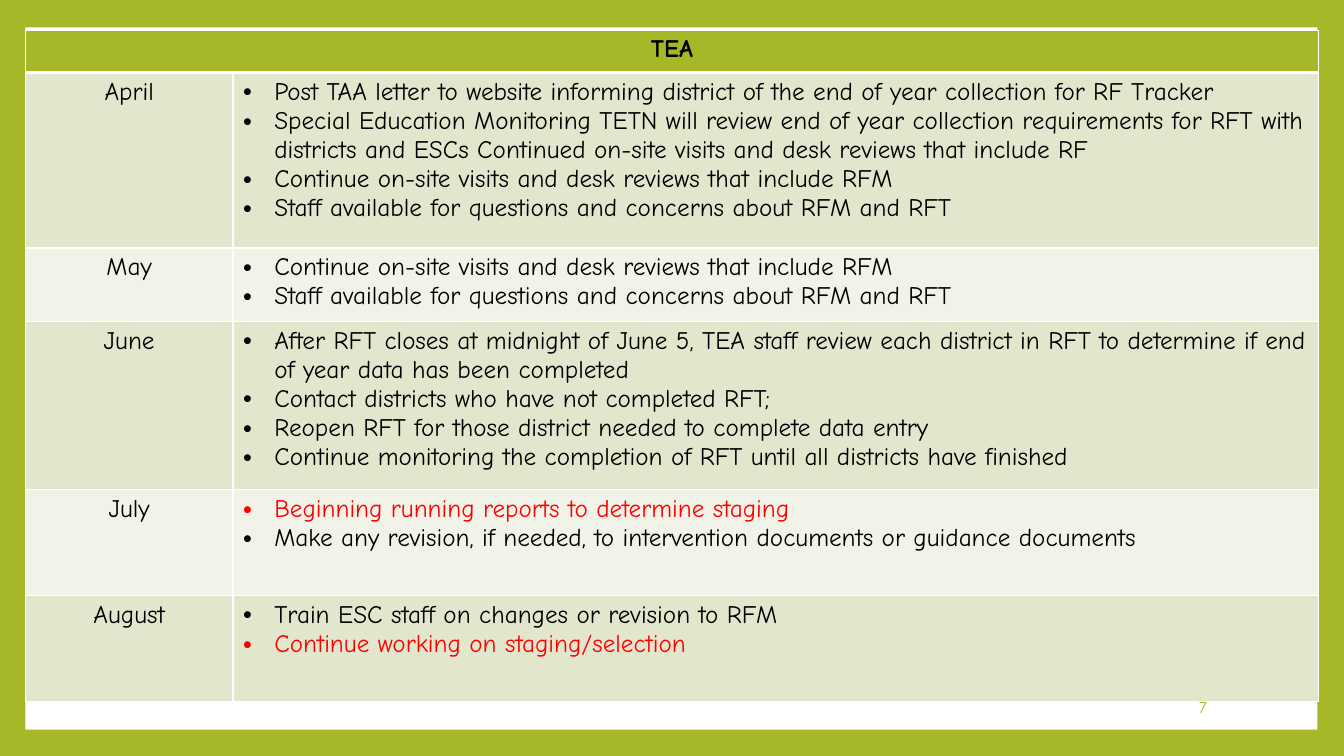
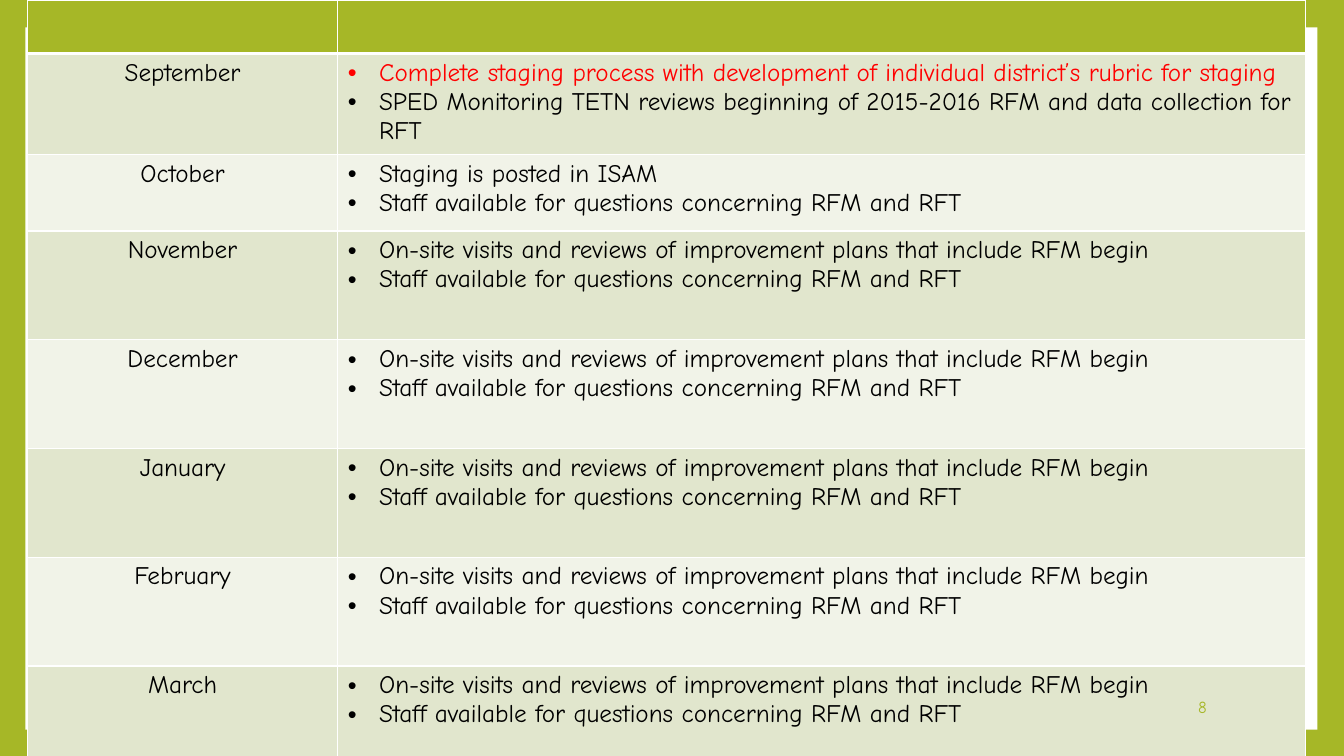
import pptx
import pptx.dml.color
import pptx.enum.shapes
import pptx.enum.text
import pptx.oxml
import pptx.oxml.ns
import pptx.util

Cm = pptx.util.Cm
Pt = pptx.util.Pt
ALIGN = pptx.enum.text.PP_ALIGN

FONT = "Comic Neue"
GREEN = "A6B727"
WHITE = "FFFFFF"
BLACK = "000000"
RED = "FF0000"
BANDS = ("E1E6CD", "F1F3E8")
THIN, THICK = 1, 3
BULLET_INDENT = Cm(0.79)


def colour(code):
    return pptx.dml.color.RGBColor.from_string(code)


def plain(text):
    return text, BLACK


def urgent(text):
    return text, RED


class Calendar:
    def __init__(self):
        self.deck = pptx.Presentation()
        self.deck.slide_width = Cm(33.87)
        self.deck.slide_height = Cm(19.05)
        self.page = None
        self.paint(self.deck.slide_master.background.fill, GREEN)

    def paint(self, fill, code):
        fill.solid()
        fill.fore_color.rgb = colour(code)

    def add_page(self):
        self.page = self.deck.slides.add_slide(self.deck.slide_layouts[6])

    def add_master_panel(self):
        panel = self.page.shapes.add_shape(
            pptx.enum.shapes.MSO_SHAPE.RECTANGLE, Cm(0.64), Cm(0.69), Cm(32.56), Cm(17.7))
        panel.shadow.inherit = False
        panel.line.fill.background()
        self.paint(panel.fill, WHITE)
        panel.element.nvSpPr.cNvPr.set("id", "50")
        self.deck.slide_master.shapes.element.append(panel.element)

    def add_span(self, para, text, size=18, code=BLACK, bold=False):
        span = para.add_run()
        span.text = text
        span.font.name = FONT
        span.font.size = Pt(size)
        span.font.bold = bold
        span.font.color.rgb = colour(code)

    def add_centred(self, cell, text, bold=False):
        para = cell.text_frame.paragraphs[0]
        para.alignment = ALIGN.CENTER
        self.add_span(para, text, bold=bold)

    def add_bullets(self, cell, lines):
        frame = cell.text_frame
        for index, (text, code) in enumerate(lines):
            para = frame.add_paragraph() if index else frame.paragraphs[0]
            props = para._p.get_or_add_pPr()
            props.set("marL", str(BULLET_INDENT))
            props.set("indent", str(-BULLET_INDENT))
            for tag, key, value in (("buFont", "typeface", "Arial"), ("buChar", "char", "•")):
                mark = pptx.oxml.parse_xml(f"<a:{tag} {pptx.oxml.ns.nsdecls('a')}/>")
                mark.set(key, value)
                props.append(mark)
            self.add_span(para, text, code=code)

    def style_cell(self, cell, code, top=THIN, bottom=THIN):
        self.paint(cell.fill, code)
        props = cell._tc.get_or_add_tcPr()
        sides = (("lnL", THIN), ("lnR", THIN), ("lnT", top), ("lnB", bottom))
        for index, (side, width) in enumerate(sides):
            border = pptx.oxml.parse_xml(
                f'<a:{side} {pptx.oxml.ns.nsdecls("a")} w="{Pt(width)}">'
                f'<a:solidFill><a:srgbClr val="{WHITE}"/></a:solidFill></a:{side}>')
            props.insert(index, border)

    def add_schedule(self, left, top, widths, header_height, months, heading=None):
        heights = [header_height] + [height for _, height, _ in months]
        table = self.page.shapes.add_table(
            len(heights), len(widths), Cm(left), Cm(top), Cm(sum(widths)), Cm(sum(heights))).table
        table.first_row = False
        table.horz_banding = False
        for column, width in zip(table.columns, widths):
            column.width = Cm(width)
        for row, height in zip(table.rows, heights):
            row.height = Cm(height)
        for cell in table.rows[0].cells:
            self.style_cell(cell, GREEN, bottom=THICK)
        if heading:
            table.cell(0, 0).merge(table.cell(0, 1))
            self.add_centred(table.cell(0, 0), heading, bold=True)
        for index, (month, _, lines) in enumerate(months):
            name, tasks = table.rows[index + 1].cells
            for cell in (name, tasks):
                self.style_cell(cell, BANDS[index % 2], top=THIN if index else THICK)
            self.add_centred(name, month)
            self.add_bullets(tasks, lines)

    def add_number(self, number):
        box = self.page.shapes.add_textbox(Cm(25.91), Cm(17.3), Cm(4.75), Cm(1.02))
        frame = box.text_frame
        frame.word_wrap = True
        frame.vertical_anchor = pptx.enum.text.MSO_ANCHOR.MIDDLE
        para = frame.paragraphs[0]
        para.alignment = ALIGN.RIGHT
        self.add_span(para, str(number), size=12, code=GREEN)


VISITS = [
    plain("Continue on-site visits and desk reviews that include RFM"),
    plain("Staff available for questions and concerns about RFM and RFT"),
]
QUESTIONS = plain("Staff available for questions concerning RFM and RFT")
PLANS = [
    plain("On-site visits and reviews of improvement plans that include RFM begin"),
    QUESTIONS,
]

SPRING = [
    ("April", 4.42, [
        plain("Post TAA letter to website informing district of the end of year collection "
              "for RF Tracker"),
        plain("Special Education Monitoring TETN will review end of year collection "
              "requirements for RFT with districts and ESCs Continued on-site visits and "
              "desk reviews that include RF"),
        *VISITS,
    ]),
    ("May", 1.85, VISITS),
    ("June", 4.24, [
        plain("After RFT closes at midnight of June 5, TEA staff review each district in RFT "
              "to determine if end of year data has been completed"),
        plain("Contact districts who have not completed RFT;"),
        plain("Reopen RFT for those district needed to complete data entry"),
        plain("Continue monitoring the completion of RFT until all districts have finished"),
    ]),
    ("July", 2.67, [
        urgent("Beginning running reports to determine staging"),
        plain("Make any revision, if needed, to intervention documents or guidance documents"),
    ]),
    ("August", 2.67, [
        plain("Train ESC staff on changes or revision to RFM"),
        urgent("Continue working on staging/selection"),
    ]),
]

AUTUMN = [
    ("September", 1.93, [
        urgent("Complete staging process with development of individual district’s rubric "
               "for staging"),
        plain("SPED Monitoring TETN reviews beginning of 2015-2016 RFM and data collection "
              "for RFT"),
    ]),
    ("October", 1.93, [plain("Staging is posted in ISAM"), QUESTIONS]),
    *[(month, 2.74, PLANS) for month in ("November", "December", "January", "February")],
    ("March", 2.51, PLANS),
]


def main():
    calendar = Calendar()
    calendar.add_page()
    calendar.add_master_panel()
    calendar.add_schedule(0.64, 0.76, (5.23, 27.36), 1.07, SPRING, heading="TEA")
    calendar.add_number(7)
    calendar.add_page()
    calendar.add_schedule(0.69, 0, (7.82, 24.38), 1.35, AUTUMN)
    calendar.add_number(8)
    calendar.deck.save("out.pptx")


if __name__ == "__main__":
    main()
